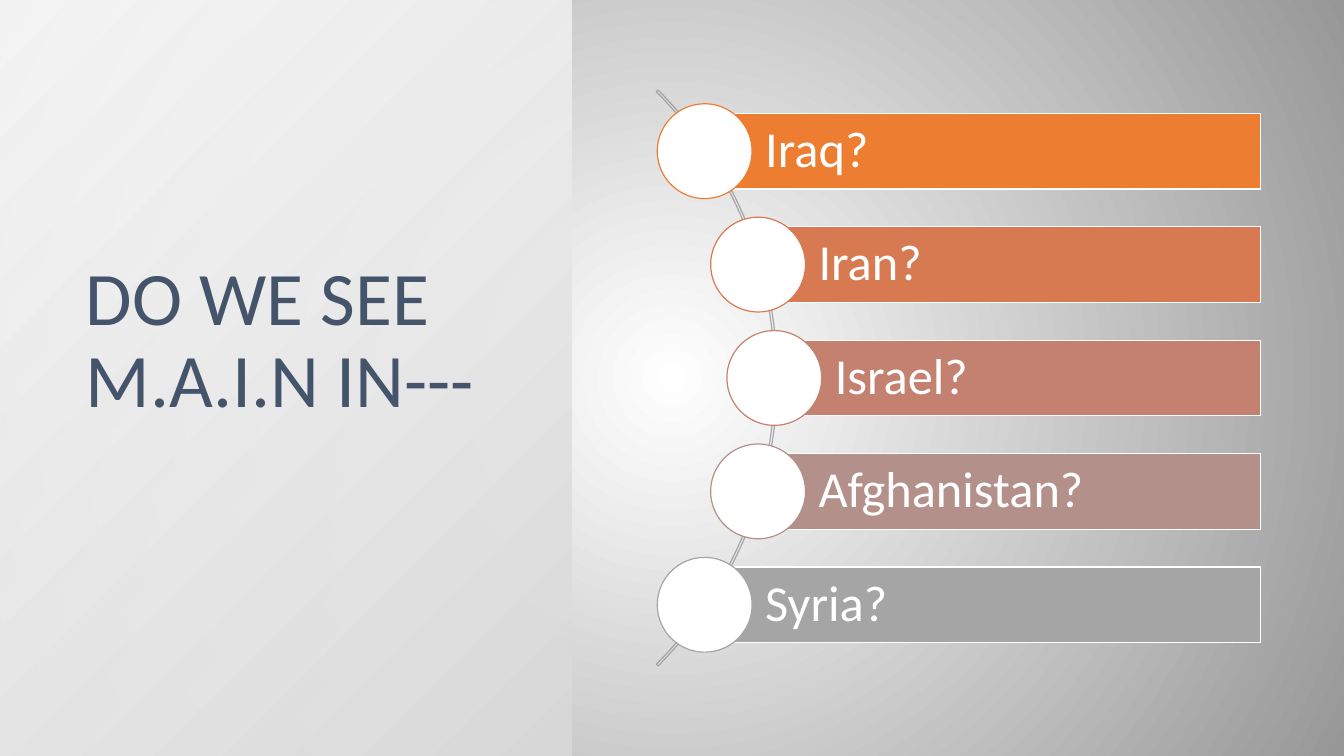
from math import sqrt

from lxml import etree
from pptx import Presentation
from pptx.dml.color import RGBColor
from pptx.enum.shapes import MSO_SHAPE
from pptx.enum.text import MSO_ANCHOR, MSO_AUTO_SIZE, PP_ALIGN
from pptx.oxml.ns import qn
from pptx.util import Inches, Pt

RECTANGLE, OVAL, BLOCK_ARC = MSO_SHAPE.RECTANGLE, MSO_SHAPE.OVAL, MSO_SHAPE.BLOCK_ARC
MIDDLE, BOTTOM = MSO_ANCHOR.MIDDLE, MSO_ANCHOR.BOTTOM
LEFT = PP_ALIGN.LEFT
NO_AUTOFIT = MSO_AUTO_SIZE.NONE

WHITE = RGBColor(0xFF, 0xFF, 0xFF)
PANEL_GREY = RGBColor(0xD9, 0xD9, 0xD9)
EDGE_GREY = RGBColor(0x97, 0x97, 0x97)
ARC_GREY = RGBColor(0xA5, 0xA5, 0xA5)
TITLE_BLUE = RGBColor(0x44, 0x54, 0x6A)
COUNTRIES = [
    ("Iraq?", RGBColor(0xED, 0x7D, 0x31)),
    ("Iran?", RGBColor(0xD8, 0x7A, 0x51)),
    ("Israel?", RGBColor(0xC4, 0x81, 0x70)),
    ("Afghanistan?", RGBColor(0xB4, 0x90, 0x8B)),
    ("Syria?", ARC_GREY),
]

FONT = "Calibri"
LINE_WIDTH = Pt(0.85)
ARC_X, ARC_Y = 3.67, 3.75
ARC_RADIUS = 4.04
CIRCLE_PATH_RADIUS = 4.01
ROW_STEP = 1.125
BAR_RIGHT, BAR_HEIGHT = 12.5, 0.75
CIRCLE_SIZE = 0.94


def radial_gradient(fill, element, inner, outer, focus):
    """Fill with a circular gradient; focus gives left, top, right, bottom in percent."""
    fill.gradient()
    for stop, color in zip(fill.gradient_stops, (inner, outer)):
        stop.color.rgb = color
    gradient = element.find(".//" + qn("a:gradFill"))
    circle = etree.Element(qn("a:path"), {"path": "circle"})
    sides = {side: str(percent * 1000) for side, percent in zip("ltrb", focus)}
    etree.SubElement(circle, qn("a:fillToRect"), sides)
    gradient.replace(gradient.find(qn("a:lin")), circle)
    return gradient


def add_shape(slide, kind, left, top, width, height, fill=None, line=None):
    shape = slide.shapes.add_shape(
        kind, Inches(left), Inches(top), Inches(width), Inches(height))
    shape.shadow.inherit = False
    if fill is None:
        shape.fill.background()
    else:
        shape.fill.solid()
        shape.fill.fore_color.rgb = fill
    if line is None:
        shape.line.fill.background()
    else:
        shape.line.color.rgb = line
        shape.line.width = LINE_WIDTH
    return shape


def write_text(frame, text, size, color, anchor):
    frame.word_wrap = True
    frame.auto_size = NO_AUTOFIT
    frame.vertical_anchor = anchor
    paragraph = frame.paragraphs[0]
    paragraph.alignment = LEFT
    paragraph.line_spacing = 0.9
    run = paragraph.add_run()
    run.text = text
    run.font.name = FONT
    run.font.size = Pt(size)
    run.font.color.rgb = color


def add_panel(slide):
    panel = add_shape(slide, RECTANGLE, 0, 0, 5.67, 7.5)
    gradient = radial_gradient(
        panel.fill, panel._element, PANEL_GREY, WHITE, (100, 100, 0, 0))
    outer_color = gradient.findall(".//" + qn("a:srgbClr"))[-1]
    etree.SubElement(outer_color, qn("a:alpha"), val="89000")


def add_arc(slide):
    arc = add_shape(slide, BLOCK_ARC, ARC_X - ARC_RADIUS, ARC_Y - ARC_RADIUS,
                    2 * ARC_RADIUS, 2 * ARC_RADIUS, line=ARC_GREY)
    for index, value in enumerate((189, 27, 0.003)):
        arc.adjustments[index] = value


def add_country(slide, name, color, offset):
    """Add a bar whose circle lies on the arc, offset inches below its middle."""
    x = ARC_X + sqrt(CIRCLE_PATH_RADIUS ** 2 - offset ** 2)
    y = ARC_Y + offset
    bar = add_shape(slide, RECTANGLE, x, y - BAR_HEIGHT / 2,
                    BAR_RIGHT - x, BAR_HEIGHT, color, WHITE)
    bar.text_frame.margin_left = Inches(0.6)
    write_text(bar.text_frame, name, 36, WHITE, MIDDLE)
    add_shape(slide, OVAL, x - CIRCLE_SIZE / 2, y - CIRCLE_SIZE / 2,
              CIRCLE_SIZE, CIRCLE_SIZE, WHITE, color)


def place_title(slide, text):
    title = slide.shapes.title
    title.left, title.top = Inches(0.75), Inches(0.75)
    title.width, title.height = Inches(4.25), Inches(3.5)
    write_text(title.text_frame, text, 54, TITLE_BLUE, BOTTOM)
    # The title belongs in front of the panel.
    slide.shapes._spTree.append(title._element)


def main():
    deck = Presentation()
    deck.slide_width, deck.slide_height = Inches(13.33), Inches(7.5)
    slide = deck.slides.add_slide(deck.slide_layouts[5])
    radial_gradient(slide.background.fill, slide._element,
                    WHITE, EDGE_GREY, (50, 50, 50, 50))
    add_panel(slide)
    add_arc(slide)
    middle = len(COUNTRIES) // 2
    for row, (name, color) in enumerate(COUNTRIES):
        add_country(slide, name, color, (row - middle) * ROW_STEP)
    place_title(slide, "DO WE SEE M.A.I.N IN---")
    deck.save("out.pptx")


if __name__ == "__main__":
    main()
